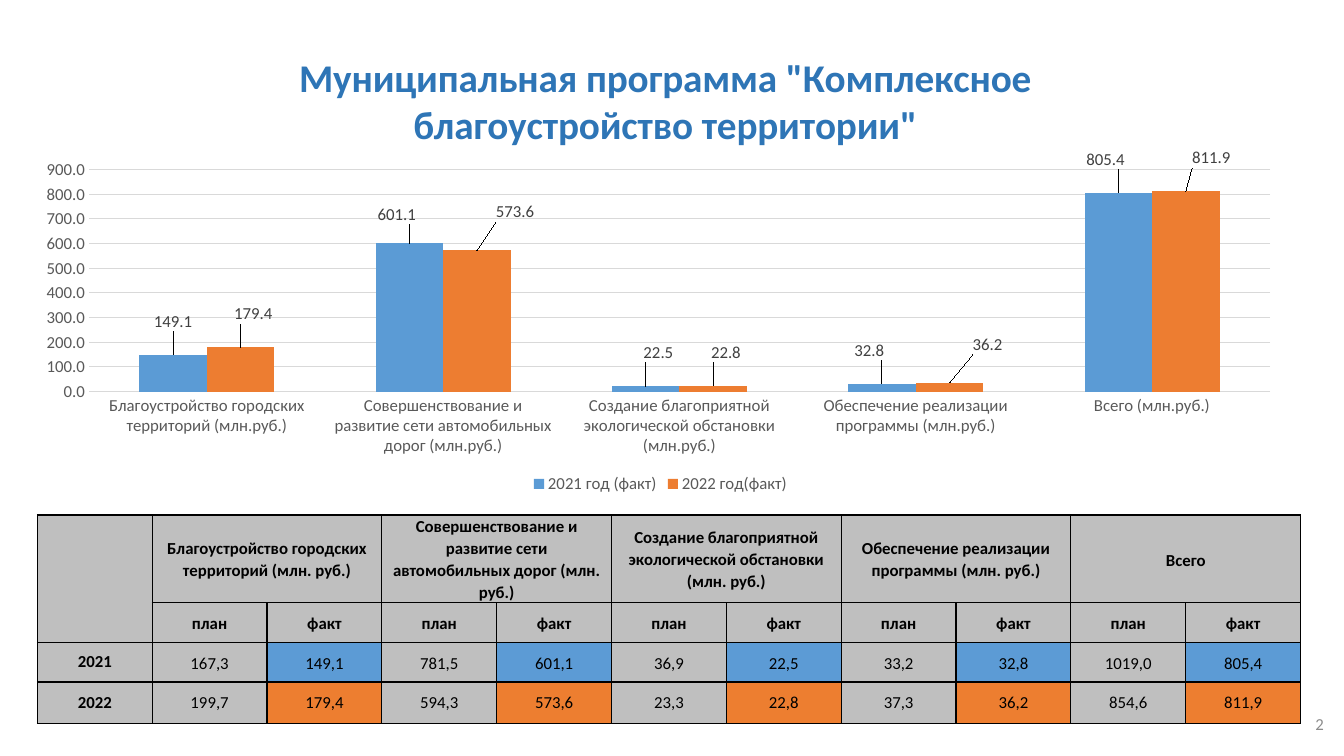
from dataclasses import dataclass

from lxml.etree import SubElement
from pptx import Presentation
from pptx.chart.data import CategoryChartData
from pptx.dml.color import RGBColor
from pptx.enum.chart import XL_CHART_TYPE, XL_LABEL_POSITION, XL_LEGEND_POSITION, XL_TICK_MARK
from pptx.enum.text import MSO_ANCHOR, PP_ALIGN
from pptx.oxml import parse_xml
from pptx.oxml.ns import nsdecls, qn
from pptx.slide import Slide
from pptx.table import _Cell
from pptx.text.text import Font
from pptx.util import Emu, Inches, Pt

FONT_NAME = "Calibri"
BLACK = RGBColor(0x00, 0x00, 0x00)
TITLE_BLUE = RGBColor(0x2E, 0x75, 0xB6)
AXIS_GREY = RGBColor(0x59, 0x59, 0x59)
LABEL_GREY = RGBColor(0x40, 0x40, 0x40)
GRID_GREY = RGBColor(0xD9, 0xD9, 0xD9)
NUMBER_GREY = RGBColor(0x8C, 0x8C, 0x8C)
CELL_GREY = RGBColor(0xBF, 0xBF, 0xBF)
BAR_BLUE = RGBColor(0x5B, 0x9B, 0xD5)
BAR_ORANGE = RGBColor(0xED, 0x7D, 0x31)
CELL_BLUE = RGBColor(0x5C, 0x9B, 0xD5)
CELL_ORANGE = RGBColor(0xED, 0x7E, 0x30)

SLIDE_WIDTH, SLIDE_HEIGHT = Inches(13.33), Inches(7.5)


@dataclass(frozen=True)
class Area:
    """A rectangle in percent of the slide's width and height."""
    left: float
    top: float
    width: float
    height: float

    def lengths(self) -> tuple[Emu, Emu, Emu, Emu]:
        return (Emu(int(SLIDE_WIDTH * self.left / 100)), Emu(int(SLIDE_HEIGHT * self.top / 100)),
                Emu(int(SLIDE_WIDTH * self.width / 100)), Emu(int(SLIDE_HEIGHT * self.height / 100)))


@dataclass(frozen=True)
class Year:
    """One year: its bars, label shifts (shares of the chart) and table row."""
    label: str
    series_name: str
    bar_color: RGBColor
    cell_color: RGBColor
    line_spacing: float
    plan: tuple[float, ...]
    fact: tuple[float, ...]
    label_shifts: tuple[tuple[float, float], ...]


@dataclass(frozen=True)
class Programme:
    category: str
    heading: str
    line_spacing: float = 1.07


CHART_AREA = Area(1.88, 2, 94.52, 63.87)
TABLE_AREA = Area(2.78, 68.13, 94, 27.6)
NUMBER_AREA = Area(76.74, 93.07, 22.5, 5.33)
ROW_SHARES = (0.42, 0.19, 0.19, 0.2)

CHART_TITLE = 'Муниципальная программа "Комплексное благоустройство территории"'
PROGRAMMES = tuple(
    Programme(f"{name} (млн.руб.)", f"{name} (млн. руб.)") for name in (
        "Благоустройство городских территорий",
        "Совершенствование и развитие сети автомобильных дорог",
        "Создание благоприятной экологической обстановки",
        "Обеспечение реализации программы",
    )
) + (Programme("Всего (млн.руб.)", "Всего", 1.15),)
YEARS = (
    Year("2021", "2021 год (факт)", BAR_BLUE, CELL_BLUE, 1.15,
         (167.3, 781.5, 36.9, 33.2, 1019.0), (149.1, 601.1, 22.5, 32.8, 805.4),
         ((0, -0.04), (-0.01, -0.03), (0.01, -0.04), (-0.01, -0.04), (-0.01, -0.04))),
    Year("2022", "2022 год(факт)", BAR_ORANGE, CELL_ORANGE, 1.0,
         (199.7, 594.3, 23.3, 37.3, 854.6), (179.4, 573.6, 22.8, 36.2, 811.9),
         ((0.01, -0.04), (0.03, -0.05), (0.01, -0.04), (0.03, -0.05), (0.02, -0.04))),
)


def style_font(font: Font, size: float, color: RGBColor, bold: bool = False) -> None:
    font.name, font.size, font.bold = FONT_NAME, Pt(size), bold
    font.color.rgb = color


def manual_layout(**settings: object):
    layout = parse_xml(f"<c:layout {nsdecls('c')}><c:manualLayout/></c:layout>")
    for name, value in settings.items():
        SubElement(layout[0], qn(f"c:{name}")).set("val", str(value))
    return layout


def add_bar_chart(page: Slide) -> None:
    data = CategoryChartData(number_format="0.0")
    data.categories = [programme.category for programme in PROGRAMMES]
    for year in YEARS:
        data.add_series(year.series_name, year.fact)
    chart = page.shapes.add_chart(XL_CHART_TYPE.COLUMN_CLUSTERED, *CHART_AREA.lengths(), data).chart
    style_font(chart.font, 10, BLACK)

    # Title
    chart.has_title = True
    title = chart.chart_title
    title.text_frame.text = CHART_TITLE
    style_font(title.text_frame.paragraphs[0].runs[0].font, 28, TITLE_BLUE, True)
    title.include_in_layout = False
    for old_layout in title._element.findall(qn("c:layout")):
        title._element.remove(old_layout)
    title._element.find(qn("c:tx")).addnext(
        manual_layout(xMode="edge", yMode="edge", x=0.21, y=0.06))

    # Legend
    chart.has_legend = True
    chart.legend.position = XL_LEGEND_POSITION.BOTTOM
    chart.legend.include_in_layout = False
    style_font(chart.legend.font, 12, AXIS_GREY)

    # Axes
    for axis in (chart.category_axis, chart.value_axis):
        axis.major_tick_mark = axis.minor_tick_mark = XL_TICK_MARK.NONE
        axis.format.line.fill.background()
        style_font(axis.tick_labels.font, 12, AXIS_GREY)
    values = chart.value_axis
    values.minimum_scale, values.maximum_scale, values.major_unit = 0, 900, 100
    values.tick_labels.number_format = "0.0"
    values.tick_labels.number_format_is_linked = False
    values.major_gridlines.format.line.color.rgb = GRID_GREY
    values.major_gridlines.format.line.width = Pt(0.75)

    # Plot area and bars
    plot_area = chart._chartSpace.chart.plotArea
    for old_layout in plot_area.findall(qn("c:layout")):
        plot_area.remove(old_layout)
    plot_area.insert(0, manual_layout(layoutTarget="inner", xMode="edge", yMode="edge",
                                      x=0.05, y=0.32, w=0.93, h=0.46))
    plot = chart.plots[0]
    plot.gap_width, plot.overlap, plot.vary_by_categories = 150, 0, False
    for series, year in zip(plot.series, YEARS):
        series.format.fill.solid()
        series.format.fill.fore_color.rgb = year.bar_color
        labels = series.data_labels
        labels.show_value = True
        labels.number_format, labels.number_format_is_linked = "0.0", False
        style_font(labels.font, 12, LABEL_GREY)
        for index in range(len(PROGRAMMES)):
            label = series.points[index].data_label
            style_font(label.font, 12, LABEL_GREY)
            label.position = XL_LABEL_POSITION.OUTSIDE_END
        for element, (x, y) in zip(series._element.iter(qn("c:dLbl")), year.label_shifts):
            element.find(qn("c:idx")).addnext(manual_layout(x=x, y=y))


def style_cell(cell: _Cell, fill: RGBColor = CELL_GREY) -> None:
    properties = cell._tc.get_or_add_tcPr()
    for side in ("lnL", "lnR", "lnT", "lnB"):
        properties.append(parse_xml(
            f'<a:{side} {nsdecls("a")} w="12700"><a:solidFill><a:srgbClr val="{BLACK}"/>'
            f"</a:solidFill></a:{side}>"))
    cell.fill.solid()
    cell.fill.fore_color.rgb = fill
    cell.vertical_anchor = MSO_ANCHOR.MIDDLE
    cell.margin_left = cell.margin_right = Inches(0.07)
    cell.margin_top = cell.margin_bottom = 0


def write_cell(cell: _Cell, text: str, bold: bool, line_spacing: float) -> None:
    cell.text = text
    para = cell.text_frame.paragraphs[0]
    para.alignment, para.line_spacing = PP_ALIGN.CENTER, line_spacing
    style_font(para.runs[0].font, 12, BLACK, bold)


def add_plan_table(page: Slide) -> None:
    left, top, width, height = TABLE_AREA.lengths()
    column_count = 1 + 2 * len(PROGRAMMES)
    table = page.shapes.add_table(len(ROW_SHARES), column_count, left, top, width, height).table
    for row, share in zip(table.rows, ROW_SHARES):
        row.height = Emu(int(height * share))
    for row_index in range(len(ROW_SHARES)):
        for column in range(column_count):
            is_fact = row_index >= 2 and column > 0 and column % 2 == 0
            style_cell(table.cell(row_index, column),
                       YEARS[row_index - 2].cell_color if is_fact else CELL_GREY)

    # Headings
    table.cell(0, 0).merge(table.cell(1, 0))
    for index, programme in enumerate(PROGRAMMES):
        column = 1 + 2 * index
        table.cell(0, column).merge(table.cell(0, column + 1))
        write_cell(table.cell(0, column), programme.heading, True, programme.line_spacing)
        for offset, text in enumerate(("план", "факт")):
            write_cell(table.cell(1, column + offset), text, True, 1.15)

    # Yearly figures
    for row_index, year in enumerate(YEARS, start=2):
        write_cell(table.cell(row_index, 0), year.label, True, 1.0)
        figures = [value for pair in zip(year.plan, year.fact) for value in pair]
        for column, value in enumerate(figures, start=1):
            text = f"{value:.1f}".replace(".", ",")
            write_cell(table.cell(row_index, column), text, False, year.line_spacing)


def add_page_number(page: Slide) -> None:
    frame = page.shapes.add_textbox(*NUMBER_AREA.lengths()).text_frame
    frame.word_wrap, frame.vertical_anchor = True, MSO_ANCHOR.MIDDLE
    frame.text = "2"
    frame.paragraphs[0].alignment = PP_ALIGN.RIGHT
    style_font(frame.paragraphs[0].runs[0].font, 12, NUMBER_GREY)


def main() -> None:
    deck = Presentation()
    deck.slide_width, deck.slide_height = SLIDE_WIDTH, SLIDE_HEIGHT
    page = deck.slides.add_slide(deck.slide_layouts.get_by_name("Blank"))
    add_page_number(page)
    add_plan_table(page)
    add_bar_chart(page)
    deck.save("out.pptx")


if __name__ == "__main__":
    main()
